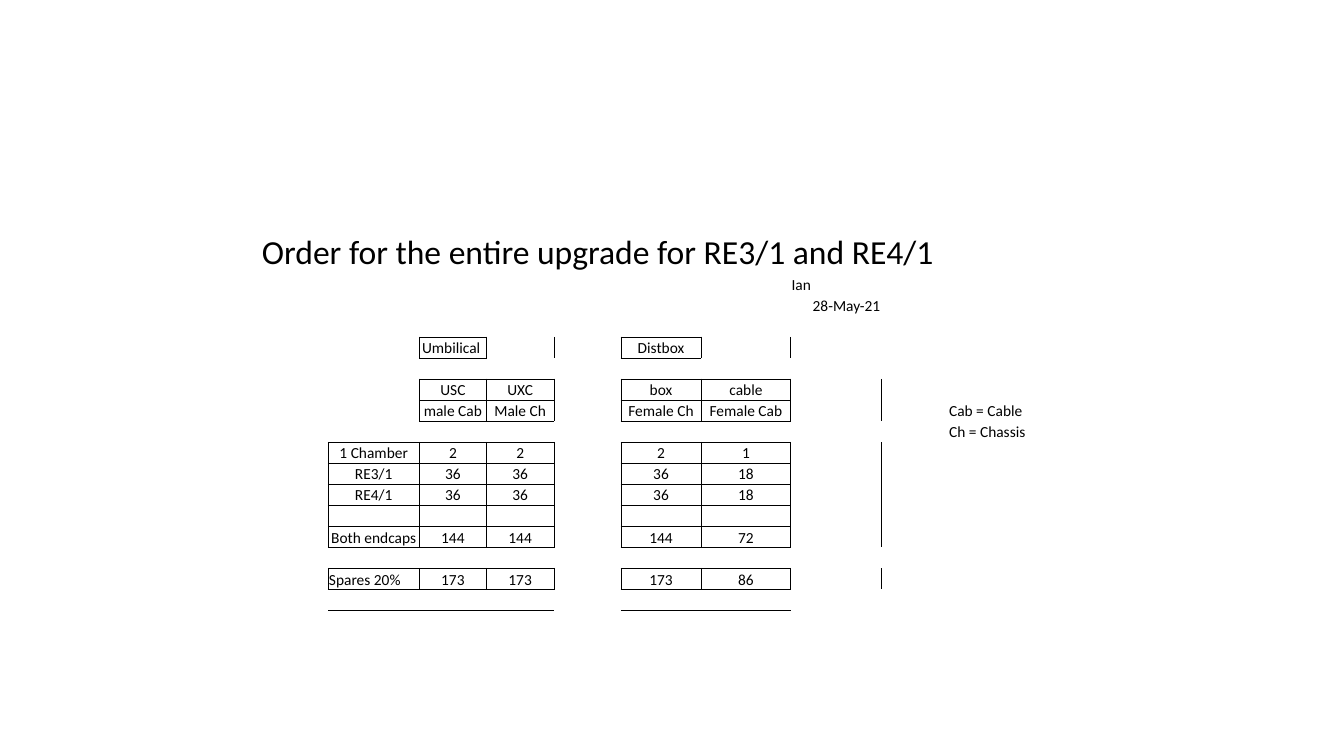
from lxml.etree import SubElement
from pptx import Presentation
from pptx.dml.color import RGBColor
from pptx.enum.text import MSO_ANCHOR, PP_ALIGN
from pptx.oxml.ns import qn
from pptx.util import Cm, Pt

BLACK = "000000"
PLAIN_TABLE_STYLE = "{2D5ABB26-0587-4C30-8999-92F81FD0307C}"
COLUMN_WIDTHS = [1.69, 2.3, 1.69, 1.7, 1.69, 2.02, 2.26, 2.28, 1.69, 1.69, 1.69]
ROW_HEIGHTS = [1.11] + [0.53] * 18

# Row number: texts of the boxed cells, keyed by column
BOXED_COLUMNS = (1, 2, 3, 5, 6)
ORDER_ROWS = {
    9: ["1 Chamber", "2", "2", "2", "1"],
    10: ["RE3/1", "36", "36", "36", "18"],
    11: ["RE4/1", "36", "36", "36", "18"],
    12: ["", "", "", "", ""],
    13: ["Both endcaps", "144", "144", "144", "72"],
    15: ["Spares 20%", "173", "173", "173", "86"],
}
HEADER_ROWS = {
    4: {2: "Umbilical ", 5: "Distbox"},
    6: {2: "USC", 3: "UXC", 5: "box", 6: "cable"},
    7: {2: "male Cab", 3: "Male Ch", 5: "Female Ch", 6: "Female Cab"},
}
NOTES = {
    (0, 0): "Order for the entire upgrade for RE3/1 and RE4/1",
    (1, 7): "Ian",
    (2, 7): "28-May-21",
    (7, 9): "Cab = Cable",
    (8, 9): "Ch = Chassis",
}
MERGES = [(0, 0, 8), (7, 9, 10), (8, 9, 10)]
ALIGNMENTS = {(2, 7): PP_ALIGN.RIGHT, (15, 1): PP_ALIGN.LEFT}
SIDES = {"lnL": (0, -1), "lnR": (0, 1), "lnT": (-1, 0), "lnB": (1, 0)}


def color(hex_text):
    return RGBColor.from_string(hex_text)


class SlideBuilder:
    font_name = "Calibri"
    text_size = 11
    title_size = 24
    border_width = 0.5
    cell_format = {
        "vertical_anchor": MSO_ANCHOR.BOTTOM,
        "margin_left": Cm(0.02),
        "margin_right": Cm(0.02),
        "margin_top": Cm(0.02),
        "margin_bottom": Cm(0),
    }

    def __init__(self, slide):
        self.slide = slide

    def add_table(self, left, top, widths, heights):
        frame = self.slide.shapes.add_table(
            len(heights), len(widths), Cm(left), Cm(top),
            Cm(sum(widths)), Cm(sum(heights)))
        table = frame.table
        table.first_row = table.horz_banding = False
        frame._element.find(".//" + qn("a:tableStyleId")).text = PLAIN_TABLE_STYLE
        for column, width in zip(table.columns, widths):
            column.width = Cm(width)
        for row, height in zip(table.rows, heights):
            row.height = Cm(height)
        return table

    def fill_cell(self, cell, text, size, alignment):
        for name, value in self.cell_format.items():
            setattr(cell, name, value)
        paragraph = cell.text_frame.paragraphs[0]
        paragraph.alignment = alignment
        if text:
            run = paragraph.add_run()
            run.text = text
            font_format = {"name": self.font_name, "size": Pt(size)}
            for name, value in font_format.items():
                setattr(run.font, name, value)
            run.font.color.rgb = color(BLACK)
        else:
            # An empty cell keeps the small text height, so its row does not grow
            SubElement(paragraph._p, qn("a:endParaRPr"), sz=str(size * 100))

    def draw_borders(self, cell, sides):
        properties = cell._tc.get_or_add_tcPr()
        for side in sides:
            line = SubElement(properties, qn("a:" + side), w=str(Pt(self.border_width)))
            fill = SubElement(line, qn("a:solidFill"))
            SubElement(fill, qn("a:srgbClr"), val=BLACK)
        cell.fill.background()


def main():
    presentation = Presentation()
    presentation.slide_width, presentation.slide_height = Cm(33.87), Cm(19.05)
    builder = SlideBuilder(presentation.slides.add_slide(presentation.slide_layouts[6]))
    table = builder.add_table(6.58, 5.79, COLUMN_WIDTHS, ROW_HEIGHTS)

    boxed = {(row, column): text for row, texts in HEADER_ROWS.items()
             for column, text in texts.items()}
    boxed.update({(row, column): text for row, texts in ORDER_ROWS.items()
                  for column, text in zip(BOXED_COLUMNS, texts)})
    texts = {**NOTES, **boxed}

    for row in range(len(ROW_HEIGHTS)):
        for column in range(len(COLUMN_WIDTHS)):
            place = (row, column)
            cell = table.cell(row, column)
            default = PP_ALIGN.CENTER if place in boxed else PP_ALIGN.LEFT
            size = builder.title_size if place == (0, 0) else builder.text_size
            builder.fill_cell(cell, texts.get(place, ""), size,
                              ALIGNMENTS.get(place, default))
            # Both cells that share an edge carry the same line
            builder.draw_borders(cell, [
                side for side, (down, right) in SIDES.items()
                if place in boxed or (row + down, column + right) in boxed])

    for row, first, last in MERGES:
        table.cell(row, first).merge(table.cell(row, last))
    presentation.save("out.pptx")


if __name__ == "__main__":
    main()
